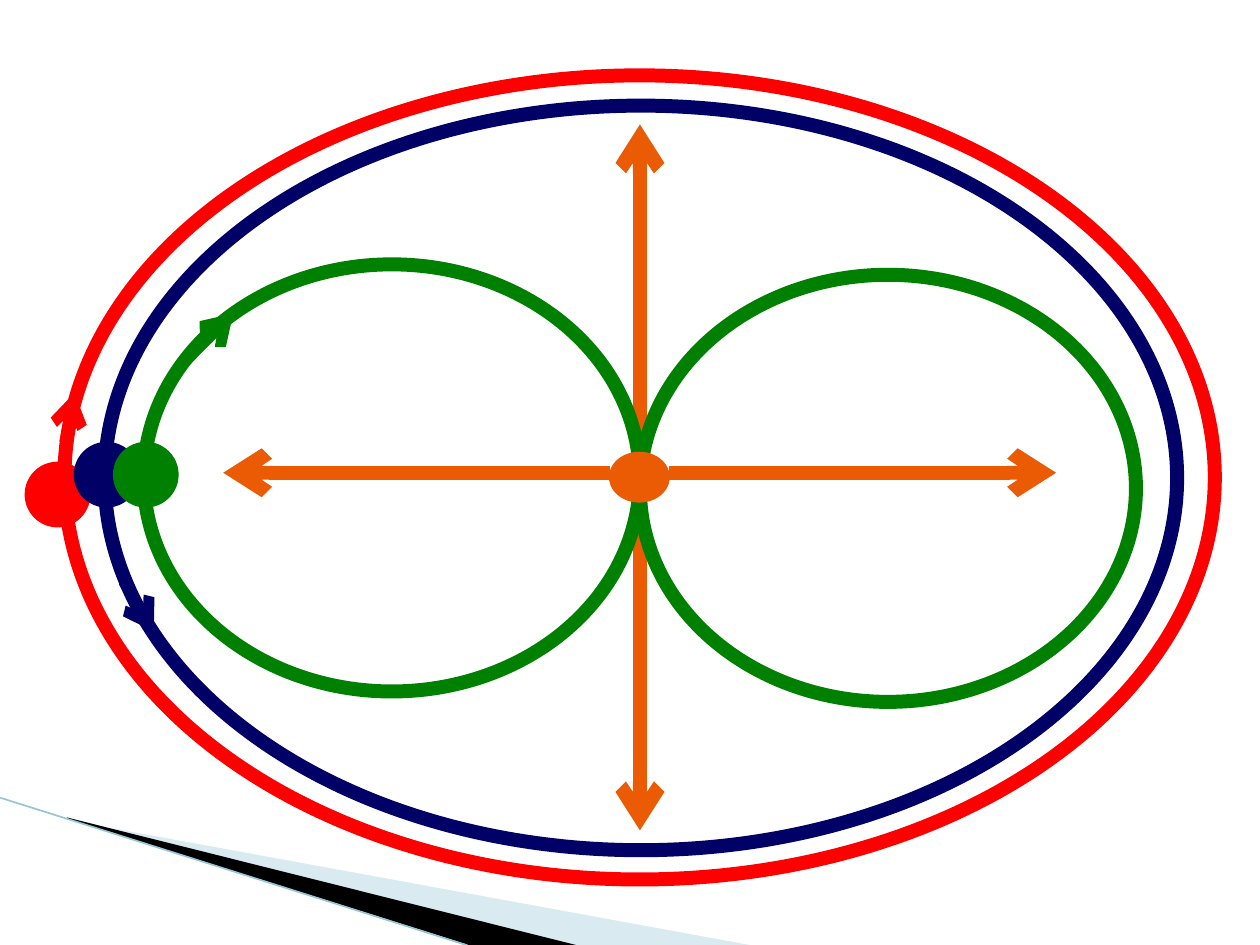
from lxml import etree
from pptx import Presentation
from pptx import util as u
from pptx.dml import color
from pptx.enum import shapes
from pptx.oxml import ns

COLORS = {
    "red": "FF0000",
    "navy": "000066",
    "green": "008000",
    "orange": "EB5B03",
    "pale": "A0CBDC",
    "edge": "97C5D8",
    "black": "000000",
}
WIDTH, HEIGHT = 25.4, 19.05
CENTER_X, CENTER_Y = 12.9, 9.53
THICK, MEDIUM, THIN = 8, 6, 0.75
DOT = 1.3


class Diagram:
    def __init__(self, slide):
        self.slide = slide

    def rgb(self, name):
        return color.RGBColor.from_string(COLORS[name])

    def outline(self, line, name, width):
        line.color.rgb = self.rgb(name)
        line.width = u.Pt(width)

    def fill(self, shape, name):
        shape.fill.solid()
        shape.fill.fore_color.rgb = self.rgb(name)

    def line(self, start, end, name, width, arrow=True):
        connector = self.slide.shapes.add_connector(
            shapes.MSO_CONNECTOR.STRAIGHT, *map(u.Cm, start + end))
        self.outline(connector.line, name, width)
        properties = connector.element.spPr
        if arrow:
            tail = etree.SubElement(properties.find(ns.qn("a:ln")), ns.qn("a:tailEnd"))
            tail.set("type", "arrow")
        etree.SubElement(properties, ns.qn("a:effectLst"))

    def ellipse(self, left, top, width, height, name):
        shape = self.slide.shapes.add_shape(
            shapes.MSO_SHAPE.OVAL, *map(u.Cm, (left, top, width, height)))
        shape.shadow.inherit = False
        return shape

    def ring(self, left, top, width, height, name):
        shape = self.ellipse(left, top, width, height, name)
        shape.fill.background()
        self.outline(shape.line, name, THICK)

    def dot(self, left, top, name, width=DOT, height=DOT):
        shape = self.ellipse(left, top, width, height, name)
        self.fill(shape, name)
        self.outline(shape.line, name, THIN)

    def wedge(self, points, name, opacity=100):
        corners = [(u.Cm(x), u.Cm(y)) for x, y in points]
        builder = self.slide.shapes.build_freeform(*corners[0])
        builder.add_line_segments(corners[1:], close=True)
        shape = builder.convert_to_shape()
        shape.shadow.inherit = False
        self.fill(shape, name)
        shape.line.fill.background()
        if opacity < 100:
            rgb = shape.element.spPr.find(".//" + ns.qn("a:srgbClr"))
            etree.SubElement(rgb, ns.qn("a:alpha")).set("val", str(opacity * 1000))


def main():
    presentation = Presentation()
    presentation.slide_width = u.Cm(WIDTH)
    presentation.slide_height = u.Cm(HEIGHT)
    diagram = Diagram(presentation.slides.add_slide(presentation.slide_layouts[6]))

    diagram.wedge([(1.4, 16.54), (15.11, HEIGHT), (11.58, HEIGHT), (1.4, 16.51)], "pale", 40)
    diagram.wedge([(1.35, 16.48), (11.61, HEIGHT), (9.45, HEIGHT), (1.37, 16.51)], "black")
    diagram.line((0, 16.08), (9.4, HEIGHT), "edge", 0.95, arrow=False)

    for start, end in ((10.34, 16.74), (8.71, 2.51)):
        diagram.line((CENTER_X, start), (CENTER_X, end), "orange", THICK)
    for start, end in ((12.29, 4.5), (13.49, 21.29)):
        diagram.line((start, CENTER_Y), (end, CENTER_Y), "orange", THICK)

    diagram.ring(1.3, 1.52, 23.19, 16.21, "red")
    diagram.ring(2.11, 2.13, 21.62, 15.01, "navy")

    diagram.line((3.71, 7.32), (4.7, 6.32), "green", MEDIUM)
    diagram.line((1.3, 8.92), (1.5, 7.92), "red", MEDIUM)
    diagram.line((2.49, 11.73), (3.1, 12.73), "navy", MEDIUM)

    diagram.dot(0.51, 9.32, "red")
    for left, top in ((2.9, 5.33), (CENTER_X, 5.54)):
        diagram.ring(left, top, 10, 8.61, "green")
    diagram.dot(12.29, 9.12, "orange", 1.2, 1)
    diagram.dot(1.5, 8.92, "navy")
    diagram.dot(2.29, 8.92, "green")

    presentation.save("out.pptx")


if __name__ == "__main__":
    main()
